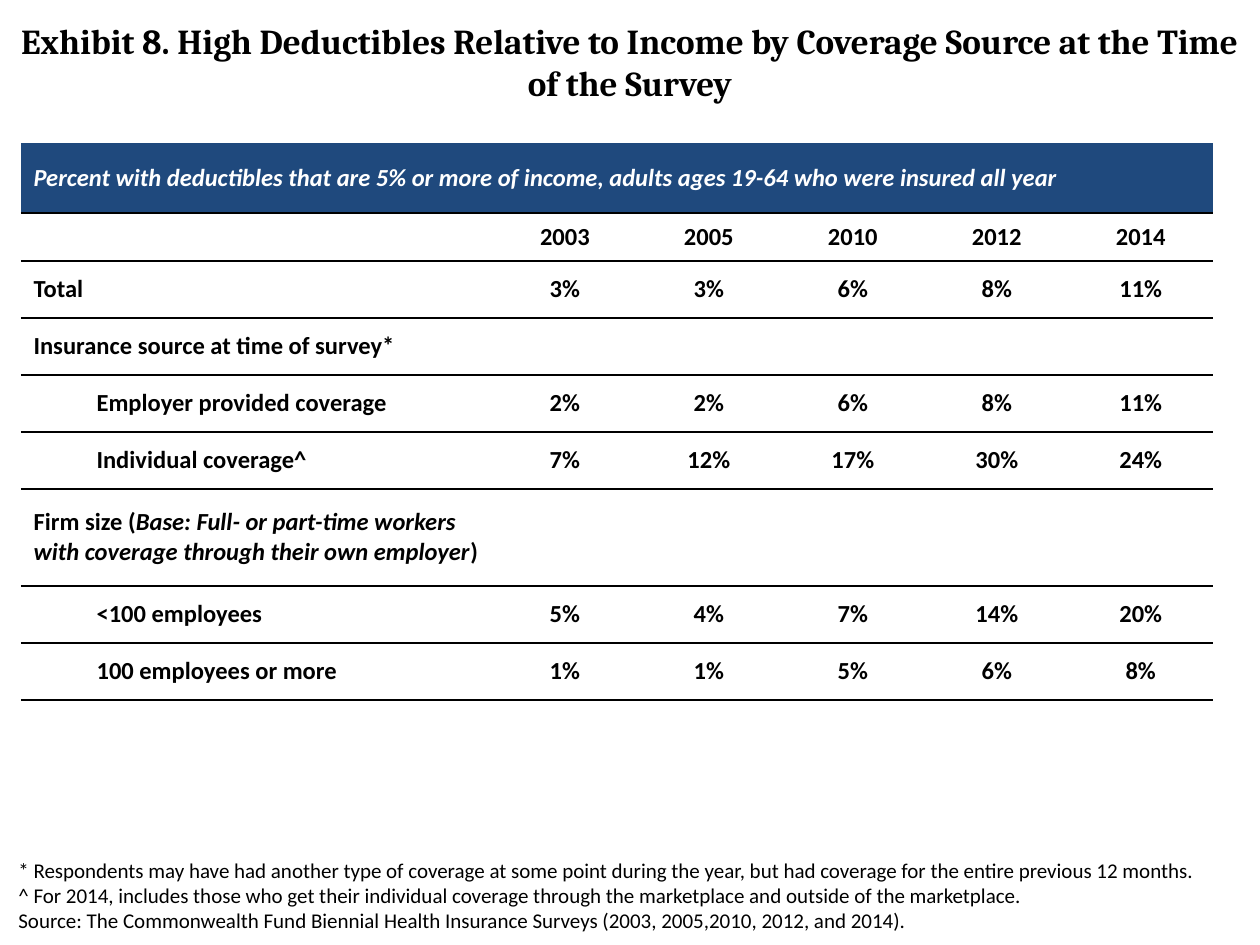
from lxml import etree
from pptx import Presentation, util as u
from pptx.dml.color import RGBColor
from pptx.enum import text
from pptx.oxml.ns import qn

# Content: a label is a list of (words, italic) runs
TITLE = ("Exhibit 8. High Deductibles Relative to Income by Coverage Source "
         "at the Time of the Survey")
HEADER = [("Percent with deductibles that are 5% or more of income, "
           "adults ages 19-64 who were insured all year", True)]
FIRM_SIZE = [("Firm size (", False),
             ("Base: Full- or part-time workers with coverage through their own employer", True),
             (")", False)]
# label, indent level, values, row height in px
ROWS = [
    (HEADER, 0, [], 70),
    ([], 0, ["2003", "2005", "2010", "2012", "2014"], 48),
    ([("Total", False)], 0, ["3%", "3%", "6%", "8%", "11%"], 57),
    ([("Insurance source at time of survey*", False)], 0, [], 57),
    ([("Employer provided coverage", False)], 1, ["2%", "2%", "6%", "8%", "11%"], 57),
    ([("Individual coverage^", False)], 1, ["7%", "12%", "17%", "30%", "24%"], 57),
    (FIRM_SIZE, 0, [], 97),
    ([("<100 employees", False)], 1, ["5%", "4%", "7%", "14%", "20%"], 57),
    ([("100 employees or more", False)], 1, ["1%", "1%", "5%", "6%", "8%"], 57),
]
NOTES = [
    "* Respondents may have had another type of coverage at some point during the year, "
    "but had coverage for the entire previous 12 months. ^ For 2014, includes those who get "
    "their individual coverage through the marketplace and outside of the marketplace.",
    "Source: The Commonwealth Fund Biennial Health Insurance Surveys "
    "(2003, 2005,2010, 2012, and 2014).",
]
COLS = [472] + [144] * 5
INDENT = 63
NO_STYLE = "{2D5ABB26-0587-4C30-8999-92F81FD0307C}"
THEME = dict(ink="000000", band="1F497D", on_band="FFFFFF", head="Cambria", body="Calibri",
             title=20, table=14, notes=12, rule=1)


def px(n):
    return u.Emu(round(n * 914400 / 126))


def style(r, font, size, color, bold=False, italic=False):
    f = r.font
    f.name, f.size, f.bold, f.italic = font, u.Pt(size), bold, italic
    f.color.rgb = RGBColor.from_string(color)


def bottom_rule(cell):
    ln = etree.Element(qn("a:lnB"), w=str(u.Pt(THEME["rule"])))
    fill = etree.SubElement(ln, qn("a:solidFill"))
    etree.SubElement(fill, qn("a:srgbClr"), val=THEME["ink"])
    cell._tc.get_or_add_tcPr().insert(0, ln)


def fill_cell(cell, runs, color, indent=0, centered=False):
    cell.vertical_anchor = text.MSO_ANCHOR.MIDDLE
    if not runs:
        cell.margin_top = cell.margin_bottom = 0
    p = cell.text_frame.paragraphs[0]
    if centered:
        p.alignment = text.PP_ALIGN.CENTER
    if indent:
        p.level = indent
        p._p.get_or_add_pPr().set("marL", str(px(INDENT * indent)))
    for words, italic in runs:
        r = p.add_run()
        r.text = words
        style(r, THEME["body"], THEME["table"], color, True, italic)


prs = Presentation()
prs.slide_width, prs.slide_height = px(1260), px(945)
s = prs.slides.add_slide(prs.slide_layouts[5])

# Title
sp = s.shapes.title
sp.left, sp.top, sp.width, sp.height = px(0), px(13), px(1260), px(97)
tf = sp.text_frame
tf.text = TITLE
tf.auto_size = text.MSO_AUTO_SIZE.NONE
tf.vertical_anchor = text.MSO_ANCHOR.MIDDLE
tf.paragraphs[0].alignment = text.PP_ALIGN.CENTER
style(tf.paragraphs[0].runs[0], THEME["head"], THEME["title"], THEME["ink"], True)

# Table
height = sum(row[-1] for row in ROWS)
tbl = s.shapes.add_table(len(ROWS), len(COLS), px(21), px(143), px(sum(COLS)), px(height)).table
tbl.first_row = tbl.horz_banding = False
tbl._tbl.tblPr.find(qn("a:tableStyleId")).text = NO_STYLE
for col, width in zip(tbl.columns, COLS):
    col.width = px(width)
for i, (label, indent, values, row_height) in enumerate(ROWS):
    tbl.rows[i].height = px(row_height)
    values = values or [""] * (len(COLS) - 1)
    cells = [label] + [[(v, False)] if v else [] for v in values]
    for j, runs in enumerate(cells):
        cell = tbl.cell(i, j)
        if i == 0:
            cell.fill.solid()
            cell.fill.fore_color.rgb = RGBColor.from_string(THEME["band"])
        else:
            cell.fill.background()
        fill_cell(cell, runs, THEME["ink" if i else "on_band"],
                  0 if j else indent, j > 0)
        bottom_rule(cell)
tbl.cell(0, 0).merge(tbl.cell(0, len(COLS) - 1))

# Notes
tf = s.shapes.add_textbox(px(6), px(851), px(1207), px(89)).text_frame
tf.word_wrap = True
tf.text = "\n".join(NOTES)
for p in tf.paragraphs:
    style(p.runs[0], THEME["body"], THEME["notes"], THEME["ink"])

prs.save("out.pptx")
